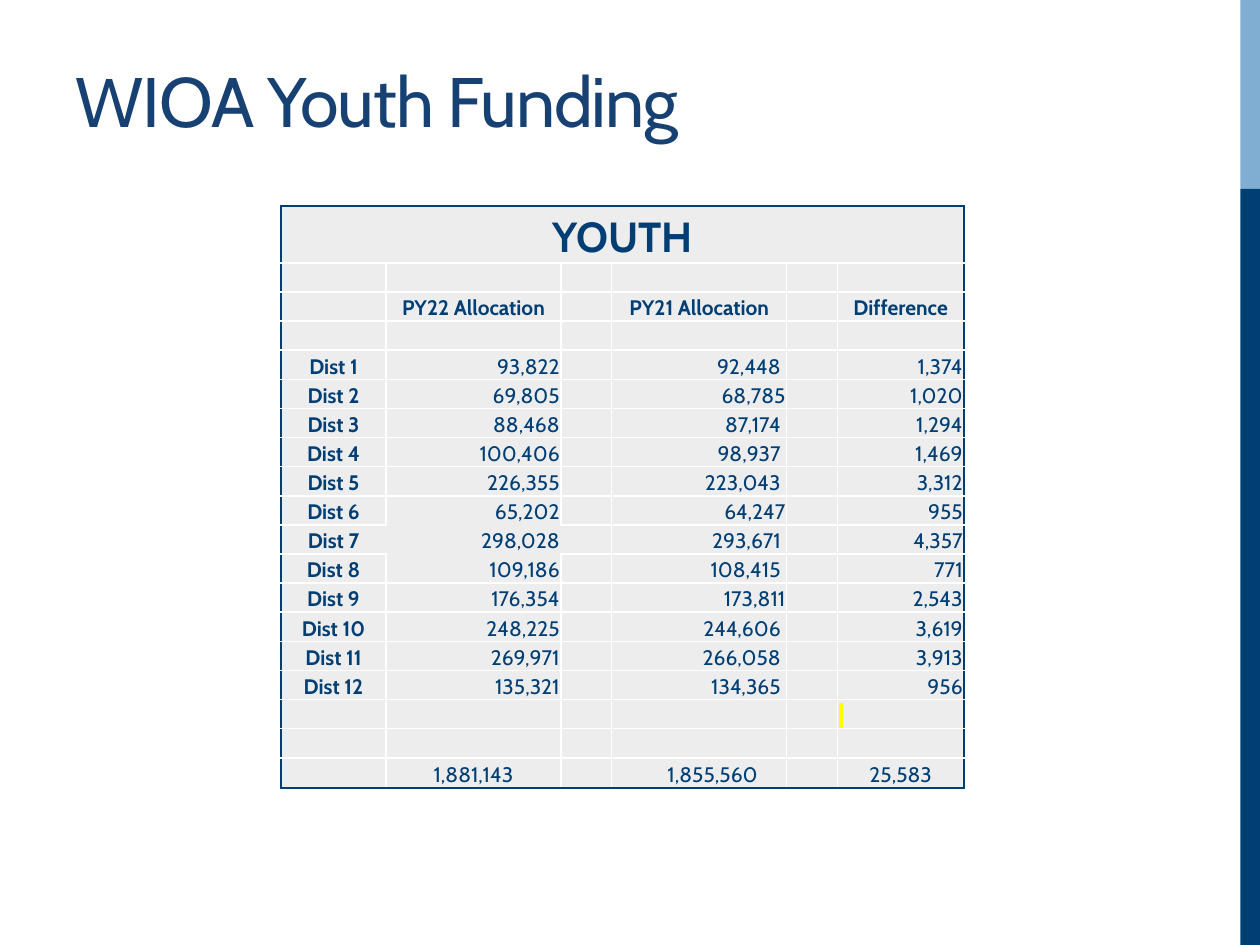
from lxml.etree import SubElement
from pptx import Presentation
from pptx.dml.color import RGBColor
from pptx.enum.shapes import MSO_SHAPE
from pptx.enum.text import MSO_ANCHOR, MSO_AUTO_SIZE, PP_ALIGN
from pptx.oxml import parse_xml
from pptx.oxml.ns import nsdecls, qn
from pptx.util import Pt

HUES = {"title": "184173", "navy": "003E74", "sky": "80ADD2",
        "gray": "EDEDED", "white": "FFFFFF", "mark": "FFFF00"}
LEFT, MID, RIGHT = PP_ALIGN.LEFT, PP_ALIGN.CENTER, PP_ALIGN.RIGHT


def style(run, hue, size, bold=False):
    form = {"name": "Cabin", "size": Pt(size), "bold": bold}
    for key, value in form.items():
        setattr(run.font, key, value)
    run.font.color.rgb = RGBColor.from_string(HUES[hue])


def edge(cell, side, hue):
    # Borders come before the fill, in the order L, R, T, B
    fill = (f'<a:solidFill><a:srgbClr val="{HUES[hue]}"/></a:solidFill>'
            if hue else "<a:noFill/>")
    line = parse_xml(f'<a:ln{side} {nsdecls("a")} w="12700">{fill}</a:ln{side}>')
    cell._tc.get_or_add_tcPr().insert("LRTB".index(side), line)


deck = Presentation()
deck.slide_width, deck.slide_height = Pt(720), Pt(540)
slide = deck.slides.add_slide(deck.slide_layouts[5])

# Side bars
for hue, top, high in (("sky", 0, 108), ("navy", 108, 432)):
    bar = slide.shapes.add_shape(MSO_SHAPE.RECTANGLE, Pt(708.75), Pt(top),
                                 Pt(11.25), Pt(high))
    bar.shadow.inherit = False
    bar.fill.solid()
    bar.fill.fore_color.rgb = RGBColor.from_string(HUES[hue])
    bar.line.fill.background()

# Title
title = slide.shapes.title
place = {"left": 36, "top": 12.24, "width": 600, "height": 72}
for key, value in place.items():
    setattr(title, key, Pt(value))
frame = title.text_frame
form = {"text": "WIOA Youth Funding", "word_wrap": True,
        "auto_size": MSO_AUTO_SIZE.NONE, "vertical_anchor": MSO_ANCHOR.BOTTOM}
for key, value in form.items():
    setattr(frame, key, value)
para = frame.paragraphs[0]
para.alignment = LEFT
style(para.runs[0], "title", 40)
para.runs[0]._r.get_or_add_rPr().set("spc", "-60")

# Funding by district: PY22, PY21, difference
funds = [
    ("93,822", "92,448", "1,374"), ("69,805", "68,785", "1,020"),
    ("88,468", "87,174", "1,294"), ("100,406", "98,937", "1,469"),
    ("226,355", "223,043", "3,312"), ("65,202", "64,247", "955"),
    ("298,028", "293,671", "4,357"), ("109,186", "108,415", "771"),
    ("176,354", "173,811", "2,543"), ("248,225", "244,606", "3,619"),
    ("269,971", "266,058", "3,913"), ("135,321", "134,365", "956"),
]
blank = ("", "", "", "")
rows = [("YOUTH", "", "", ""), blank,
        ("", "PY22 Allocation", "PY21 Allocation", "Difference"), blank]
rows += [(f"Dist {n}", *fund) for n, fund in enumerate(funds, 1)]
rows += [blank, blank, ("", "1,881,143", "1,855,560", "25,583")]
first, last = 4, len(rows) - 1
flush = ("68,785", "64,247", "173,811")
bare = {(9, 1, "B"), (10, 0, "R"), (10, 2, "L"), (11, 1, "T")}
bare |= {(10, 1, side) for side in "LRTB"}

# Table grid
wide = [60, 100, 29, 100, 29, 72.3]
tall = [32.5] + [16.64] * (last - 1) + [17.2]
table = slide.shapes.add_table(len(tall), len(wide), Pt(160.6), Pt(117.7),
                               Pt(sum(wide)), Pt(sum(tall))).table
table.first_row = table.horz_banding = False
for col, width in zip(table.columns, wide):
    col.width = Pt(width)
for row, height in zip(table.rows, tall):
    row.height = Pt(height)
table.cell(0, 0).merge(table.cell(0, 5))

# Table cells
for r, (name, new, old, diff) in enumerate(rows):
    for c, text in enumerate((name, new, "", old, "", diff)):
        cell = table.cell(r, c)
        data = first <= r < first + len(funds)
        pad = 3.4 if c == 3 and data and text not in flush else 0.72
        form = {"margin_left": Pt(16 if (r, c) == (last, 3) else 0.72),
                "margin_right": Pt(pad), "margin_top": Pt(0.72),
                "margin_bottom": 0, "vertical_anchor": MSO_ANCHOR.BOTTOM}
        for key, value in form.items():
            setattr(cell, key, value)
        cell.fill.solid()
        cell.fill.fore_color.rgb = RGBColor.from_string(HUES["gray"])
        rim = {"L": c == 0, "R": c == 5 or r == 0, "T": r == 0, "B": r == last}
        for side, outer in rim.items():
            hue = "navy" if outer else "white"
            edge(cell, side, None if (r, c, side) in bare else hue)

        para = cell.text_frame.paragraphs[0]
        if text:
            para.alignment = RIGHT if data and c else MID
            run = para.add_run()
            run.text = text
            style(run, "navy", 12 if r else 24, r < first or c == 0)
        else:
            SubElement(para._p, qn("a:endParaRPr")).set("sz", "1200")

# Highlighted space under the differences
para = table.cell(first + len(funds), 5).text_frame.paragraphs[0]
para.alignment = LEFT
run = para.add_run()
run.text = " "
style(run, "navy", 12)
mark = parse_xml(f'<a:highlight {nsdecls("a")}><a:srgbClr val="{HUES["mark"]}"/>'
                 '</a:highlight>')
run._r.get_or_add_rPr().find(qn("a:latin")).addprevious(mark)

deck.save("out.pptx")
